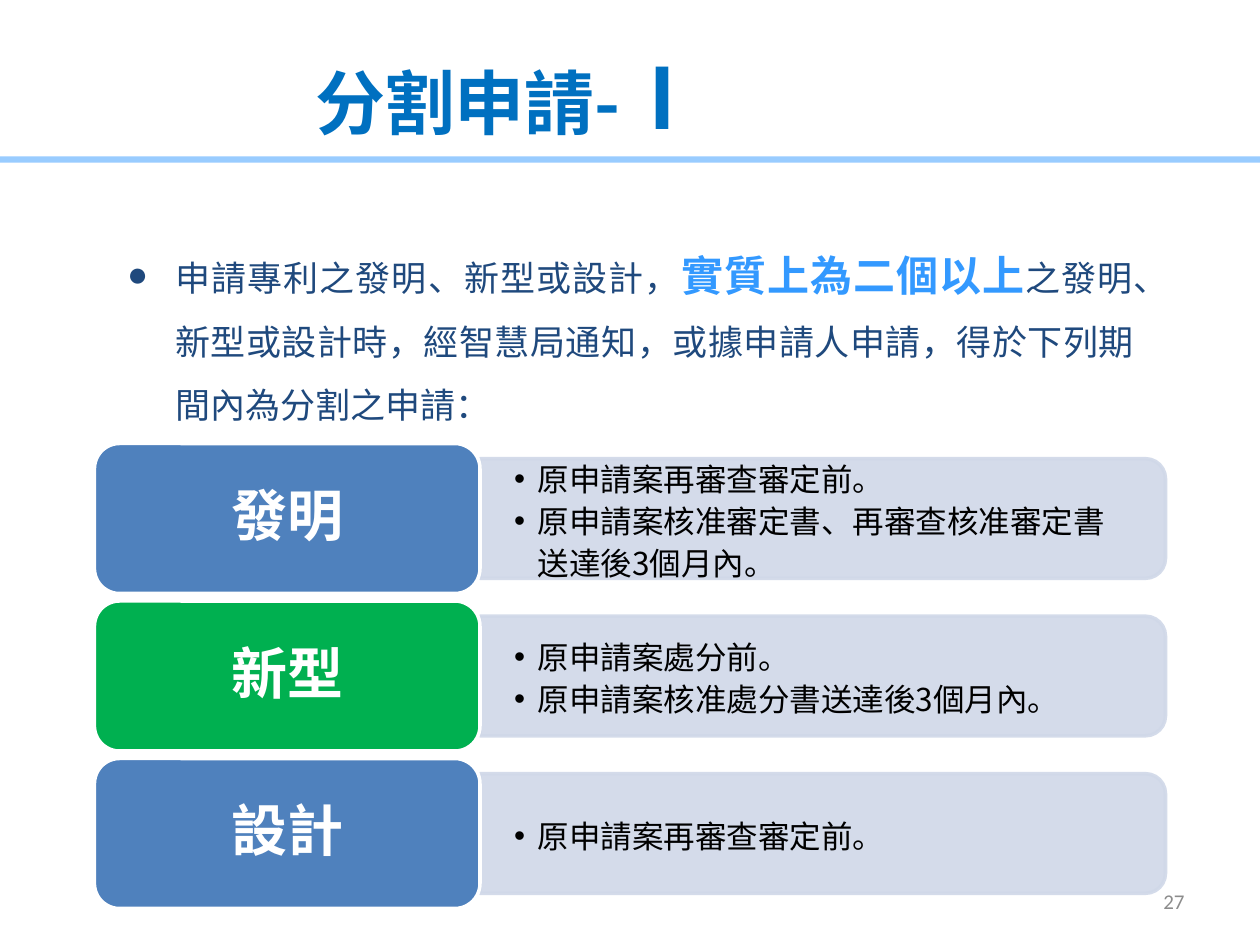
from dataclasses import dataclass

from lxml import etree
from pptx import Presentation
from pptx.dml.color import RGBColor
from pptx.enum.shapes import MSO_SHAPE
from pptx.enum.text import MSO_ANCHOR, MSO_AUTO_SIZE, PP_ALIGN
from pptx.oxml.ns import qn
from pptx.util import Inches, Pt


@dataclass(frozen=True)
class Theme:
    cjk: str = "Noto Sans CJK SC"
    cjk_alt: str = "Noto Sans CJK TC"
    latin: str = "Calibri"
    title: str = "0070C0"
    body: str = "1F497D"
    accent: str = "3399FF"
    rule: str = "99CCFF"
    blue: str = "4F81BD"
    green: str = "00B050"
    bar: str = "D0D8E8"
    black: str = "000000"
    white: str = "FFFFFF"
    grey: str = "8C8C8C"
    title_size: int = 40
    numeral_size: int = 48
    label_size: int = 32
    accent_size: int = 24
    body_size: int = 20
    item_size: int = 18
    number_size: int = 12


class SlideBuilder:
    def __init__(self, slide, theme):
        self.slide = slide
        self.theme = theme

    def add_run(self, paragraph, text, size, color, bold=False, face=None):
        face = face or self.theme.cjk
        run = paragraph.add_run()
        run.text = text
        for name, value in {"size": Pt(size), "bold": bold, "name": face}.items():
            setattr(run.font, name, value)
        run.font.color.rgb = RGBColor.from_string(color)
        east_asian = etree.SubElement(run.font._element, qn("a:ea"))
        east_asian.set("typeface", face)

    def set_bullet(self, paragraph, mark, indent):
        props = paragraph._p.get_or_add_pPr()
        props.set("marL", str(Inches(indent)))
        props.set("indent", str(-Inches(indent)))
        etree.SubElement(props, qn("a:buFont")).set("typeface", "Arial")
        etree.SubElement(props, qn("a:buChar")).set("char", mark)

    def format_frame(self, frame, anchor, margins=(0.1, 0.05)):
        side, end = (Inches(margin) for margin in margins)
        settings = {
            "auto_size": MSO_AUTO_SIZE.NONE, "word_wrap": True,
            "vertical_anchor": anchor,
            "margin_left": side, "margin_right": side,
            "margin_top": end, "margin_bottom": end,
        }
        for name, value in settings.items():
            setattr(frame, name, value)

    def fill_placeholder(self, placeholder, box, anchor):
        """Move a template placeholder and return its first paragraph."""
        for name, value in zip(("left", "top", "width", "height"), box):
            setattr(placeholder, name, Inches(value))
        self.format_frame(placeholder.text_frame, anchor)
        return placeholder.text_frame.paragraphs[0]

    def add_title(self, text, numeral):
        theme = self.theme
        paragraph = self.fill_placeholder(
            self.slide.shapes.title, (2.4, 0.29, 7.24, 0.94), MSO_ANCHOR.MIDDLE)
        paragraph.alignment = PP_ALIGN.LEFT
        self.add_run(paragraph, text, theme.title_size, theme.title, True)
        self.add_run(paragraph, numeral, theme.numeral_size, theme.title, True,
                     theme.cjk_alt)

    def add_body(self, before, emphasis, after):
        theme = self.theme
        paragraph = self.fill_placeholder(
            self.slide.placeholders[1], (0.91, 1.73, 8.19, 2.22), MSO_ANCHOR.TOP)
        paragraph.alignment = PP_ALIGN.JUSTIFY
        paragraph.line_spacing = 1.5
        paragraph.space_before = Pt(0)
        self.set_bullet(paragraph, "●", 0.38)
        self.add_run(paragraph, before, theme.body_size, theme.body)
        self.add_run(paragraph, emphasis, theme.accent_size, theme.accent, True)
        self.add_run(paragraph, after, theme.body_size, theme.body)

    def add_block(self, kind, box, fill, line=None, alpha=None):
        block = self.slide.shapes.add_shape(kind, *map(Inches, box))
        block.shadow.inherit = False
        block.fill.solid()
        block.fill.fore_color.rgb = RGBColor.from_string(fill)
        if line:
            block.line.color.rgb = RGBColor.from_string(line)
            block.line.width = Pt(2)
        else:
            block.line.fill.background()
        if alpha:
            for color in block._element.spPr.iter(qn("a:srgbClr")):
                etree.SubElement(color, qn("a:alpha")).set("val", str(alpha * 1000))
        return block

    def add_label(self, text, box, fill):
        theme = self.theme
        label = self.add_block(MSO_SHAPE.ROUNDED_RECTANGLE, box, fill, theme.white)
        self.format_frame(label.text_frame, MSO_ANCHOR.MIDDLE, (0.19, 0.13))
        paragraph = label.text_frame.paragraphs[0]
        paragraph.alignment = PP_ALIGN.CENTER
        paragraph.line_spacing = 0.9
        self.add_run(paragraph, text, theme.label_size, theme.white, True)

    def add_bar(self, left, middle, width, height):
        """Draw a bar whose right-hand corners are round: a tall tab, turned."""
        tab = (left + (width - height) / 2, middle - width / 2, height, width)
        bar = self.add_block(MSO_SHAPE.ROUND_2_SAME_RECTANGLE, tab,
                             self.theme.bar, self.theme.bar, alpha=90)
        bar.rotation = 90

    def add_items(self, items, box):
        frame = self.slide.shapes.add_textbox(*map(Inches, box)).text_frame
        self.format_frame(frame, MSO_ANCHOR.MIDDLE, (0.27, 0.14))
        for index, item in enumerate(items):
            paragraph = frame.add_paragraph() if index else frame.paragraphs[0]
            paragraph.line_spacing = Pt(24)
            self.set_bullet(paragraph, "•", 0.19)
            self.add_run(paragraph, item, self.theme.item_size, self.theme.black)

    def add_number(self, text, box):
        theme = self.theme
        frame = self.slide.shapes.add_textbox(*map(Inches, box)).text_frame
        self.format_frame(frame, MSO_ANCHOR.MIDDLE)
        paragraph = frame.paragraphs[0]
        paragraph.alignment = PP_ALIGN.RIGHT
        self.add_run(paragraph, text, theme.number_size, theme.grey, face=theme.latin)


def main():
    theme = Theme()
    deck = Presentation()
    deck.slide_width, deck.slide_height = Inches(10), Inches(7.5)
    page = SlideBuilder(deck.slides.add_slide(deck.slide_layouts[1]), theme)

    page.add_block(MSO_SHAPE.RECTANGLE, (0, 1.24, 10, 0.05), theme.rule)
    page.add_title("分割申請-", "Ⅰ")
    page.add_body(
        "申請專利之發明、新型或設計，", "實質上為二個以上",
        "之發明、新型或設計時，經智慧局通知，或據申請人申請，得於下列期間內為分割之申請：")

    periods = [
        ("發明", theme.blue, ["原申請案再審查審定前。",
                            "原申請案核准審定書、再審查核准審定書送達後3個月內。"]),
        ("新型", theme.green, ["原申請案處分前。",
                             "原申請案核准處分書送達後3個月內。"]),
        ("設計", theme.blue, ["原申請案再審查審定前。"]),
    ]
    label_left, label_width, label_height = 0.75, 3.06, 1.19
    bar_left = label_left + label_width
    first_top, pitch, items_height = 3.52, 1.25, 0.86
    for row, (name, color, items) in enumerate(periods):
        top = first_top + row * pitch
        middle = top + label_height / 2
        page.add_bar(bar_left, middle, 5.44, 0.95)
        page.add_items(items, (bar_left, middle - items_height / 2, 5.4, items_height))
        page.add_label(name, (label_left, top, label_width, label_height), color)

    page.add_number("27", (7.17, 6.95, 2.33, 0.4))
    deck.save("out.pptx")


if __name__ == "__main__":
    main()
